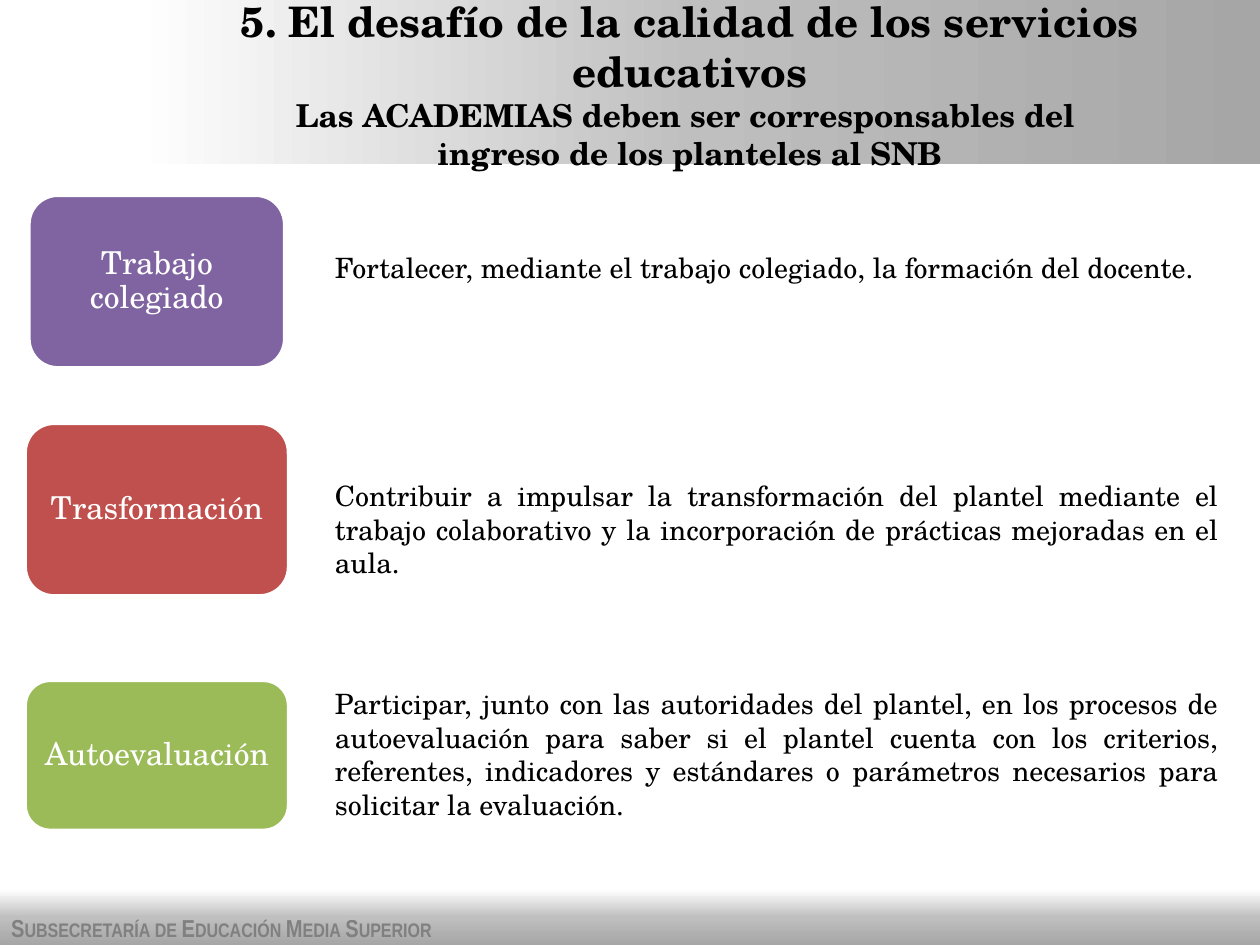
from lxml import etree
from pptx import Presentation
from pptx.dml.color import RGBColor
from pptx.enum.shapes import MSO_SHAPE as Shape
from pptx.enum.text import MSO_ANCHOR as Anchor, MSO_AUTO_SIZE as Fit, PP_ALIGN as Align
from pptx.oxml import parse_xml
from pptx.util import Inches, Pt

SERIF = "TeX Gyre Schola"
NS = "http://schemas.openxmlformats.org/drawingml/2006/main"
STOPS = [(0, "FFFFFF"), (50, "BFBFBF"), (100, "A6A6A6")]

# label, fill, card place, text, text place
ROWS = [
    ("Trabajo colegiado", "8064A2", (0.23, 1.55, 2.03, 1.37),
     "Fortalecer, mediante el trabajo colegiado, la formación del docente.",
     (2.56, 1.94, 7.21, 0.37)),
    ("Trasformación", "C0504D", (0.2, 3.36, 2.09, 1.37),
     "Contribuir a impulsar la transformación del plantel mediante el trabajo "
     "colaborativo y la incorporación de prácticas mejoradas en el aula. ",
     (2.56, 3.75, 7.21, 0.64)),
    ("Autoevaluación", "9BBB59", (0.2, 5.4, 2.09, 1.19),
     "Participar, junto con las autoridades del plantel, en los procesos de "
     "autoevaluación para saber si el plantel cuenta con los criterios, "
     "referentes, indicadores y estándares o parámetros necesarios para "
     "solicitar la evaluación.",
     (2.56, 5.4, 7.21, 1.18)),
]
HEAD = [
    ("5. El desafío de la calidad de los servicios educativos", 24),
    ("Las ACADEMIAS deben ser corresponsables del ", 18),
    ("ingreso de los planteles al SNB", 18),
]


def color(code):
    return RGBColor.from_string(code)


def write(para, text, size=16, font=SERIF, ink="000000", bold=False,
          align=Align.LEFT, lead=1.0, caps=False):
    para.alignment = align
    para.line_spacing = lead
    para.space_before = para.space_after = Pt(0)
    run = para.add_run()
    run.text = text
    run.font.size = Pt(size)
    run.font.name = font
    run.font.bold = bold
    run.font.color.rgb = color(ink)
    if caps:
        run.font._element.set("cap", "small")


def add_box(slide, place, text, **look):
    frame = slide.shapes.add_textbox(*map(Inches, place)).text_frame
    frame.word_wrap = True
    write(frame.paragraphs[0], text, **look)


def add_band(slide, place, angle):
    band = slide.shapes.add_shape(Shape.RECTANGLE, *map(Inches, place))
    band.shadow.inherit = False
    band.line.fill.background()
    # Three-stop gradient in place of the default fill
    grad = parse_xml(f'<a:gradFill xmlns:a="{NS}" rotWithShape="1"><a:gsLst/>'
                     f'<a:lin ang="{angle * 60000}" scaled="0"/></a:gradFill>')
    for pos, code in STOPS:
        stop = etree.SubElement(grad[0], f"{{{NS}}}gs", pos=str(pos * 1000))
        etree.SubElement(stop, f"{{{NS}}}srgbClr", val=code)
    band._element.spPr.find(f"{{{NS}}}prstGeom").addnext(grad)


def add_card(slide, place, text, fill):
    card = slide.shapes.add_shape(Shape.ROUNDED_RECTANGLE, *map(Inches, place))
    card.shadow.inherit = False
    card.adjustments[0] = 0.167
    card.fill.solid()
    card.fill.fore_color.rgb = color(fill)
    card.line.color.rgb = color("FFFFFF")
    card.line.width = Pt(2)
    frame = card.text_frame
    frame.word_wrap = True
    frame.vertical_anchor = Anchor.MIDDLE
    frame.margin_left = frame.margin_right = Inches(0.05)
    write(frame.paragraphs[0], text, size=18, ink="FFFFFF",
          align=Align.CENTER, lead=0.9)


def add_title(slide, place):
    title = slide.shapes.title
    title.left, title.top, title.width, title.height = map(Inches, place)
    frame = title.text_frame
    frame.auto_size = Fit.NONE
    frame.word_wrap = True
    frame.vertical_anchor = Anchor.MIDDLE
    for i, (text, size) in enumerate(HEAD):
        para = frame.add_paragraph() if i else frame.paragraphs[0]
        write(para, text, size=size, bold=True, align=Align.CENTER)
    # Bring the title in front of its band
    slide.shapes._spTree.append(title._element)


def main():
    deck = Presentation()
    deck.slide_width, deck.slide_height = Inches(10), Inches(7.5)
    slide = deck.slides.add_slide(deck.slide_layouts[5])

    # Footer and header bands
    add_band(slide, (0, 7.06, 10, 0.44), 90)
    add_box(slide, (-0.01, 7.2, 6.46, 0.34),
            "Subsecretaría de Educación Media Superior", size=14,
            font="Arial Narrow", ink="808080", bold=True, caps=True)
    add_band(slide, (1.06, 0, 8.94, 1.3), 0)

    # Topic cards with their explanations
    for label, fill, spot, text, place in ROWS:
        add_card(slide, spot, label, fill)
        add_box(slide, place, text, align=Align.JUSTIFY)

    add_title(slide, (0.85, 0.01, 9.25, 1.31))
    deck.save("out.pptx")


if __name__ == "__main__":
    main()
